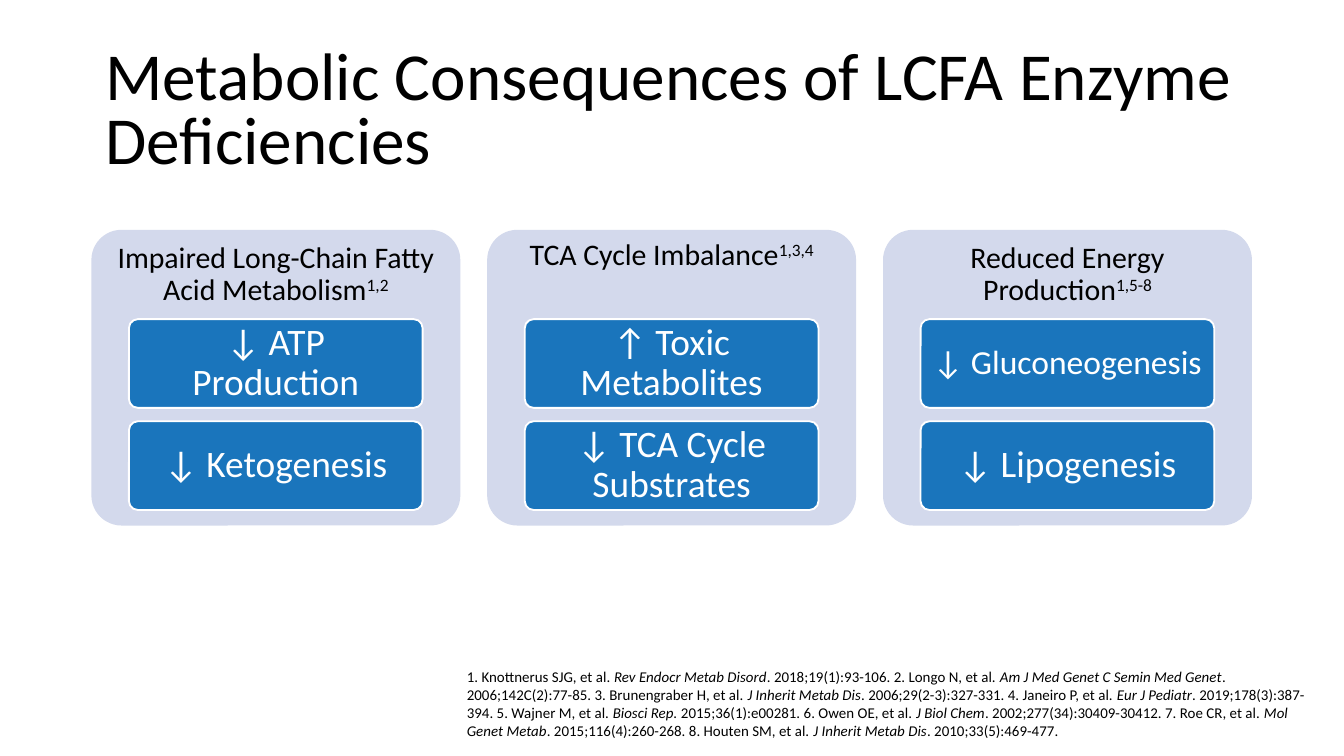
from dataclasses import dataclass

from pptx import Presentation
from pptx.dml.color import RGBColor
from pptx.enum.shapes import MSO_SHAPE as SHAPE
from pptx.enum.text import MSO_ANCHOR as ANCHOR, MSO_AUTO_SIZE as AUTO, PP_ALIGN as ALIGN
from pptx.util import Pt

PX = 4572


@dataclass(frozen=True)
class Theme:
    """Colours, font and type sizes of the slide."""
    font: str = "Calibri"
    ink: str = "000000"
    white: str = "FFFFFF"
    panel: str = "D3D9EC"
    card: str = "1A75BC"
    title: int = 36
    heading: int = 16
    effect: int = 20
    small_effect: int = 18
    reference: int = 8


THEME = Theme()

TITLE = "Metabolic Consequences of LCFA Enzyme Deficiencies"

PANELS = [
    ("Impaired Long-Chain Fatty Acid Metabolism", "1,2", ANCHOR.MIDDLE,
     [("↓ ATP Production", THEME.effect), ("↓ Ketogenesis", THEME.effect)]),
    ("TCA Cycle Imbalance", "1,3,4", ANCHOR.TOP,
     [("↑ Toxic Metabolites", THEME.effect), ("↓ TCA Cycle Substrates", THEME.effect)]),
    ("Reduced Energy Production", "1,5-8", ANCHOR.MIDDLE,
     [("↓ Gluconeogenesis", THEME.small_effect), ("↓ Lipogenesis", THEME.effect)]),
]

REFERENCES = [
    ("1. Knottnerus SJG, et al. ", "Rev Endocr Metab Disord"),
    (". 2018;19(1):93-106. 2. Longo N, et al. ", "Am J Med Genet C Semin Med Genet"),
    (". 2006;142C(2):77-85. 3. Brunengraber H, et al. ", "J Inherit Metab Dis"),
    (". 2006;29(2-3):327-331. 4. Janeiro P, et al. ", "Eur J Pediatr"),
    (". 2019;178(3):387-394. 5. Wajner M, et al. ", "Biosci Rep. "),
    ("2015;36(1):e00281. 6. Owen OE, et al. ", "J Biol Chem"),
    (". 2002;277(34):30409-30412. 7. Roe CR, et al. ", "Mol Genet Metab"),
    (". 2015;116(4):260-268. 8. Houten SM, et al. ", "J Inherit Metab Dis"),
    (". 2010;33(5):469-477.", ""),
]


def emu(*lengths):
    """Turn px lengths into EMU."""
    return [n * PX for n in lengths]


def add_run(p, text, size, color=THEME.ink, italic=False):
    """Append a formatted run to a paragraph."""
    r = p.add_run()
    r.text = text
    r.font.name, r.font.size, r.font.italic = THEME.font, Pt(size), italic
    r.font.color.rgb = RGBColor.from_string(color)
    return r


def set_frame(tf, side, edge, anchor=ANCHOR.MIDDLE):
    """Set insets, wrapping and anchor, and return the centred first paragraph."""
    tf.word_wrap, tf.vertical_anchor = True, anchor
    tf.margin_left = tf.margin_right = side * PX
    tf.margin_top = tf.margin_bottom = edge * PX
    p = tf.paragraphs[0]
    p.alignment, p.line_spacing = ALIGN.CENTER, 0.9
    return p


def add_rounded(slide, box, fill, line, weight):
    """Draw a flat rounded rectangle."""
    s = slide.shapes.add_shape(SHAPE.ROUNDED_RECTANGLE, *emu(*box))
    s.adjustments[0] = 0.1
    s.shadow.inherit = False
    s.fill.solid()
    s.fill.fore_color.rgb = RGBColor.from_string(fill)
    s.line.color.rgb = RGBColor.from_string(line)
    s.line.width = Pt(weight)
    return s


def add_title(slide, box):
    """Place the title placeholder in its box."""
    s = slide.shapes.title
    s.left, s.top, s.width, s.height = emu(*box)
    tf = s.text_frame
    tf.auto_size, tf.word_wrap, tf.vertical_anchor = AUTO.NONE, True, ANCHOR.MIDDLE
    p = tf.paragraphs[0]
    p.alignment, p.line_spacing = ALIGN.LEFT, 0.8
    add_run(p, TITLE, THEME.title)


def add_panel(slide, box, heading, cites, anchor, effects):
    """Draw one panel with its heading and stacked effect cards."""
    x, y, w, h = box
    card_h, pitch, inset = 132, 152, 55
    add_rounded(slide, box, THEME.panel, THEME.panel, 0.75)
    tf = slide.shapes.add_textbox(*emu(x, y, w, card_h)).text_frame
    p = set_frame(tf, 14, 14, anchor)
    add_run(p, heading, THEME.heading)
    sup = add_run(p, cites, THEME.heading)
    sup.font._element.set("baseline", "30000")
    for i, (text, size) in enumerate(effects):
        card = (x + inset, y + card_h + i * pitch, w - 2 * inset, card_h)
        s = add_rounded(slide, card, THEME.card, THEME.white, 1)
        p = set_frame(s.text_frame, 11 if size == THEME.effect else 10, 8)
        add_run(p, text, size, THEME.white)


def add_panels(slide, box):
    """Spread the panels evenly across the box."""
    x, y, w, h = box
    panel_w = 547
    step = (w - panel_w) // (len(PANELS) - 1)
    for i, panel in enumerate(PANELS):
        add_panel(slide, (x + i * step, y, panel_w, h), *panel)


def add_references(slide, box):
    """Write the references with journal names in italics."""
    tf = slide.shapes.add_textbox(*emu(*box)).text_frame
    tf.word_wrap, tf.auto_size = True, AUTO.SHAPE_TO_FIT_TEXT
    p = tf.paragraphs[0]
    for plain, journal in REFERENCES:
        add_run(p, plain, THEME.reference)
        if journal:
            add_run(p, journal, THEME.reference, italic=True)


def main():
    """Build and save the slide."""
    prs = Presentation()
    prs.slide_width, prs.slide_height = emu(2000, 1125)
    slide = prs.slides.add_slide(prs.slide_layouts[5])
    add_title(slide, (137, 60, 1725, 217))
    add_panels(slide, (137, 343, 1725, 438))
    add_references(slide, (675, 984, 1306, 128))
    prs.save("out.pptx")


if __name__ == "__main__":
    main()
